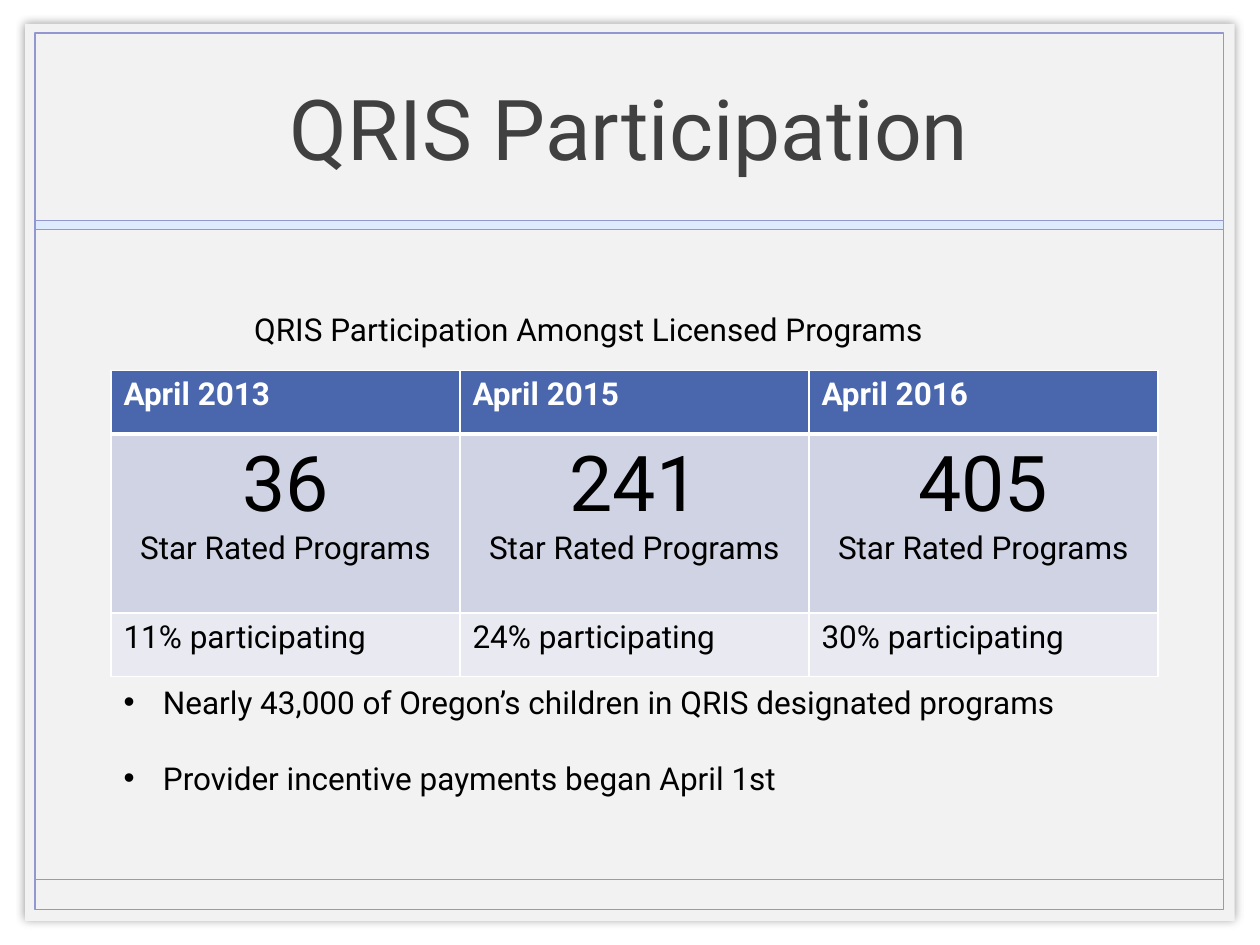
from lxml import etree
from pptx import Presentation
from pptx.dml.color import RGBColor
from pptx.enum.shapes import MSO_CONNECTOR, MSO_SHAPE
from pptx.enum.text import MSO_ANCHOR, MSO_AUTO_SIZE, PP_ALIGN
from pptx.oxml import parse_xml
from pptx.oxml.ns import nsdecls, qn
from pptx.util import Pt

RECT, STRAIGHT = MSO_SHAPE.RECTANGLE, MSO_CONNECTOR.STRAIGHT
TOP, MIDDLE, NO_FIT = MSO_ANCHOR.TOP, MSO_ANCHOR.MIDDLE, MSO_AUTO_SIZE.NONE
LEFT, CENTER = PP_ALIGN.LEFT, PP_ALIGN.CENTER

THEME = {
    "font": "Roboto",
    "panel": "F2F2F2", "frame": "9297CF", "band": "DEEAFD",
    "title": "404040", "text": "000000", "white": "FFFFFF",
    "rows": ["4A66AC", "D0D3E3", "E9EAF1"],
    "title_size": 48, "figure_size": 44, "text_size": 18,
}


def rgb(name):
    return RGBColor.from_string(THEME.get(name, name))


def write(p, text, size="text_size", color="text", bold=False, align=LEFT):
    p.alignment = align
    r = p.add_run()
    r.text = text
    r.font.color.rgb = rgb(color)
    style = {"name": THEME["font"], "size": Pt(THEME[size]), "bold": bold}
    for key, value in style.items():
        setattr(r.font, key, value)


prs = Presentation()
prs.slide_width, prs.slide_height = Pt(720), Pt(540)
s = prs.slides.add_slide(prs.slide_layouts[1])
title, body = s.placeholders[0], s.placeholders[1]

# Panel, frame and the band under the title
frame_left, frame_width = 20.2, 679
panels = [
    ((14.4, 13.7, 691.2, 512.6), "panel", None),
    ((frame_left, 18.7, frame_width, 501.1), None, 1),
    ((frame_left, 126, frame_width, 5), "band", 0.25),
]
for box, fill, line in panels:
    sp = s.shapes.add_shape(RECT, *map(Pt, box))
    sp.shadow.inherit = False
    if fill:
        sp.fill.solid()
        sp.fill.fore_color.rgb = rgb(fill)
    else:
        sp.fill.background()
    if line:
        sp.line.color.rgb = rgb("frame")
        sp.line.width = Pt(line)
    else:
        sp.line.fill.background()
        effects = sp.element.spPr.find(qn("a:effectLst"))
        effects.append(parse_xml(
            f'<a:outerShdw {nsdecls("a")} blurRad="{Pt(5)}" dist="0" dir="0">'
            '<a:srgbClr val="000000"><a:alpha val="40000"/></a:srgbClr>'
            '</a:outerShdw>'))

footer = s.shapes.add_connector(
    STRAIGHT, Pt(frame_left), Pt(502.6), Pt(frame_left + frame_width), Pt(502.6))
footer.line.color.rgb = rgb("frame")
footer.line.width = Pt(1)
etree.SubElement(footer.element.spPr, qn("a:effectLst"))

# Title and list, placed in front of the panels
for sp, box, anchor in [
    (title, (70.6, 19.4, 578.2, 105.8), MIDDLE),
    (body, (63.4, 386.6, 578.2, 116.6), TOP),
]:
    footer.element.getparent().append(sp.element)
    sp.left, sp.top, sp.width, sp.height = map(Pt, box)
    sp.text_frame.auto_size = NO_FIT
    sp.text_frame.vertical_anchor = anchor
write(title.text_frame.paragraphs[0], "QRIS Participation",
      "title_size", "title", align=CENTER)

bullets = ["Nearly 43,000 of Oregon’s children in QRIS designated programs",
           "Provider incentive payments began April 1st"]
tf = body.text_frame
for i, text in enumerate(bullets):
    p = tf.add_paragraph() if i else tf.paragraphs[0]
    write(p, text)
    p.space_before = Pt(22 * i)
    pPr = p._p.get_or_add_pPr()
    pPr.set("marL", str(Pt(22.5)))
    pPr.set("indent", str(Pt(-22.5)))
    etree.SubElement(pPr, qn("a:buFont"), typeface="Arial")
    etree.SubElement(pPr, qn("a:buChar"), char="•")

# Participation table
heads = ["April 2013", "April 2015", "April 2016"]
figures = ["36", "241", "405"]
shares = ["11% participating", "24% participating", "30% participating"]
heights = [36.4, 102.2, 36.4]
table = s.shapes.add_table(3, 3, Pt(63.4), Pt(211.7),
                           Pt(598.3), Pt(sum(heights))).table
for row, height in zip(table.rows, heights):
    row.height = Pt(height)

for r, values in enumerate([heads, figures, shares]):
    for c, value in enumerate(values):
        cell = table.cell(r, c)
        p = cell.text_frame.paragraphs[0]
        if r == 0:
            write(p, value, color="white", bold=True)
        elif r == 1:
            write(p, value, "figure_size", align=CENTER)
            write(cell.text_frame.add_paragraph(), "Star Rated Programs",
                  align=CENTER)
        else:
            write(p, value)
        thick = {0: "lnB", 1: "lnT"}.get(r)
        tcPr = cell._tc.get_or_add_tcPr()
        for side in ("lnL", "lnR", "lnT", "lnB"):
            ln = etree.SubElement(tcPr, qn(f"a:{side}"),
                                  w=str(Pt(3 if side == thick else 1)))
            fill = etree.SubElement(ln, qn("a:solidFill"))
            etree.SubElement(fill, qn("a:srgbClr"), val=THEME["white"])
        cell.fill.solid()
        cell.fill.fore_color.rgb = rgb(THEME["rows"][r])

caption = s.shapes.add_textbox(Pt(138.2), Pt(173.5), Pt(436.3), Pt(28.8))
caption.text_frame.word_wrap = True
write(caption.text_frame.paragraphs[0],
      "QRIS Participation Amongst Licensed Programs")

prs.save("out.pptx")
